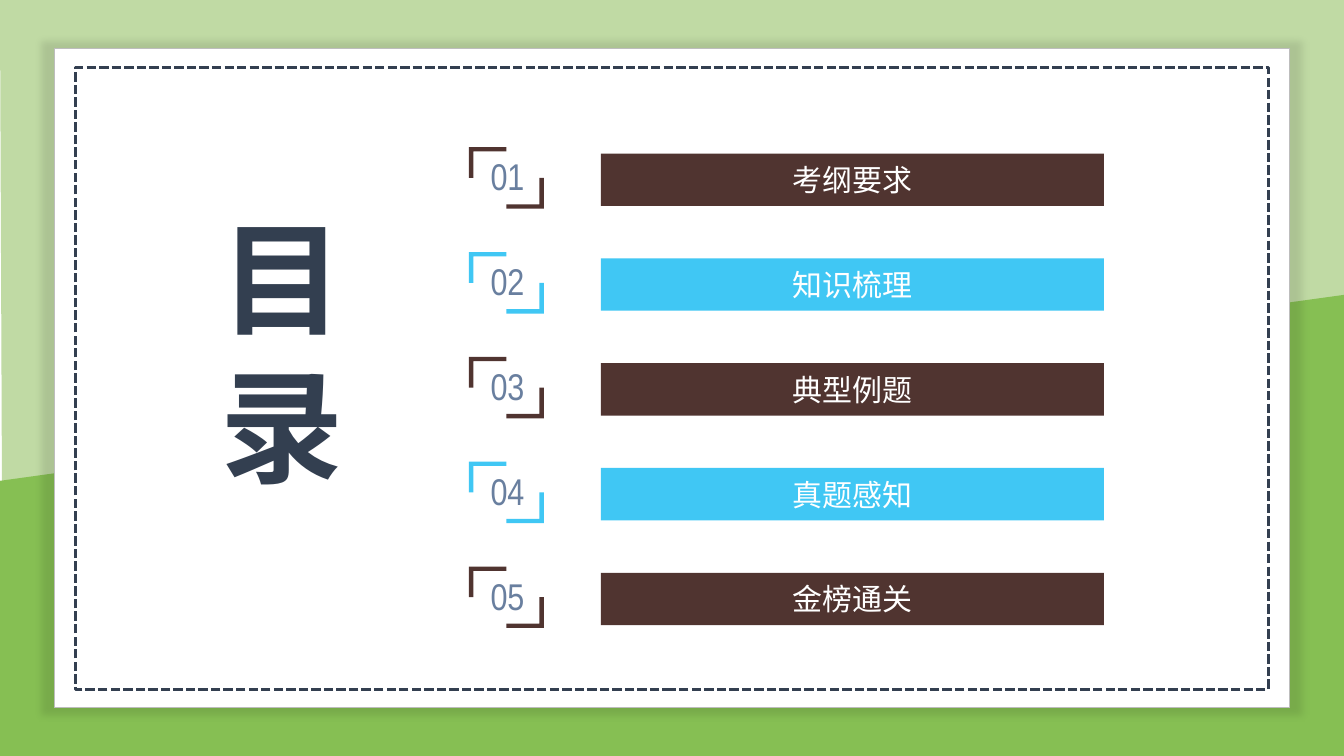
from dataclasses import dataclass

from lxml.etree import SubElement
from pptx import Presentation
from pptx.dml.color import RGBColor
from pptx.enum.dml import MSO_LINE
from pptx.enum.shapes import MSO_SHAPE
from pptx.enum.text import MSO_ANCHOR, PP_ALIGN
from pptx.oxml.ns import qn
from pptx.util import Inches, Pt

WHITE = RGBColor(0xFF, 0xFF, 0xFF)
LIGHT_GREEN = RGBColor(0xC0, 0xDA, 0xA4)
GREEN = RGBColor(0x86, 0xBF, 0x53)
PANEL_EDGE = RGBColor(0xBD, 0xBD, 0xBD)
NAVY = RGBColor(0x33, 0x3F, 0x50)
BROWN = RGBColor(0x50, 0x34, 0x30)
SKY = RGBColor(0x40, 0xC7, 0xF4)
SLATE = RGBColor(0x69, 0x7F, 0x9F)
CHINESE_FONT = "Noto Sans CJK SC"
NUMBER_FONT = "Arial Narrow"
TOPICS = ["考纲要求", "知识梳理", "典型例题", "真题感知", "金榜通关"]


@dataclass
class Box:
    """A rectangle on the slide whose areas are given in percent of it."""

    left: float
    top: float
    width: float
    height: float

    def point(self, x, y):
        """Return the slide position of a percentage point."""
        return round(self.left + self.width * x / 100), round(self.top + self.height * y / 100)

    def area(self, x, y, width, height):
        """Return the box covering the given percentages."""
        return Box(*self.point(x, y), round(self.width * width / 100), round(self.height * height / 100))

    def split_rows(self, count):
        """Split the box into equal rows."""
        return [self.area(0, 100 * row / count, 100, 100 / count) for row in range(count)]

    def bounds(self):
        """Return left, top, width and height."""
        return self.left, self.top, self.width, self.height


def write(shape, text, size, font_name, color, align=PP_ALIGN.CENTER):
    """Write one styled paragraph into a shape and return it."""
    shape.text_frame.word_wrap = True
    paragraph = shape.text_frame.paragraphs[0]
    paragraph.text = text
    paragraph.alignment = align
    font = paragraph.font
    font.size, font.name, font.color.rgb = Pt(size), font_name, color
    SubElement(paragraph._p.pPr.find(qn("a:defRPr")), qn("a:ea"), typeface=font_name)
    return paragraph


def add_polygon(slide, box, contours, color):
    """Fill the contours given in percent of the box."""
    first, *others = [[box.point(*corner) for corner in contour] for contour in contours]
    builder = slide.shapes.build_freeform(*first[0])
    builder.add_line_segments(first[1:])
    for contour in others:
        builder.move_to(*contour[0])
        builder.add_line_segments(contour[1:])
    shape = builder.convert_to_shape()
    shape.shadow.inherit = False
    shape.fill.solid()
    shape.fill.fore_color.rgb = color
    shape.line.fill.background()


def add_rectangle(slide, box, color=None):
    """Add a rectangle, filled when a colour is given."""
    shape = slide.shapes.add_shape(MSO_SHAPE.RECTANGLE, *box.bounds())
    shape.shadow.inherit = False
    if color is None:
        shape.fill.background()
    else:
        shape.fill.solid()
        shape.fill.fore_color.rgb = color
    shape.line.fill.background()
    return shape


def add_background(slide, box):
    """Draw the two green fields that meet along a slanted edge."""
    sky = [(0, 0), (100, 0), (100, 39.4), (0.15, 63.9)]
    hill = [(0, 63.6), (100, 39), (100, 100), (0, 100)]
    add_polygon(slide, box, [sky], LIGHT_GREEN)
    add_polygon(slide, box, [hill], GREEN)


def add_panel(slide, box):
    """Draw the white card with its soft halo and dashed frame."""
    card = add_rectangle(slide, box.area(4.05, 6.4, 91.88, 87.2), WHITE)
    card.line.color.rgb = PANEL_EDGE
    card.line.width = Pt(1)
    effects = card._element.spPr.find(qn("a:effectLst"))
    halo = SubElement(effects, qn("a:outerShdw"), blurRad=str(Pt(5)),
                      sx="102000", sy="102000", algn="ctr", rotWithShape="0")
    tint = SubElement(halo, qn("a:srgbClr"), val="000000")
    SubElement(tint, qn("a:alpha"), val="10000")
    frame = add_rectangle(slide, box.area(5.63, 8.93, 88.73, 82.27))
    frame.line.color.rgb = NAVY
    frame.line.width = Pt(2.25)
    frame.line.dash_style = MSO_LINE.SQUARE_DOT


def add_title(slide, box):
    """Set the title in two stacked characters above the card."""
    title = slide.shapes.title
    title.left, title.top, title.width, title.height = box.bounds()
    slide.shapes._spTree.append(title._element)
    paragraph = write(title, "目 录", 88, CHINESE_FONT, NAVY, PP_ALIGN.LEFT)
    paragraph.font.bold = True
    paragraph.line_spacing = Pt(106)
    title.text_frame.vertical_anchor = MSO_ANCHOR.TOP


def add_bracket(slide, box, color):
    """Draw two opposite corner marks, one the mirror of the other."""
    corner = [(0, 0), (50, 0), (50, 7), (6, 7), (6, 50), (0, 50)]
    mirrored = [(100 - x, 100 - y) for x, y in corner]
    add_polygon(slide, box, [corner, mirrored], color)


def add_topic(slide, box, number, topic, color):
    """Draw one row: bracketed number and topic bar."""
    bar = add_rectangle(slide, box.area(20.79, 6, 79.21, 50), color)
    bar.text_frame.vertical_anchor = MSO_ANCHOR.MIDDLE
    write(bar, topic, 21.4, CHINESE_FONT, WHITE)
    add_bracket(slide, box.area(0, 0, 11.83, 58.65), color)
    label = slide.shapes.add_textbox(*box.area(0.3, 1.5, 11.6, 53).bounds())
    write(label, f"{number:02}", 26.6, NUMBER_FONT, SLATE)


def add_contents(slide, box):
    """Draw all topics in equal rows of alternating colour."""
    for index, (row, topic) in enumerate(zip(box.split_rows(len(TOPICS)), TOPICS)):
        add_topic(slide, row, index + 1, topic, (BROWN, SKY)[index % 2])


def main():
    """Build the contents slide and save it."""
    presentation = Presentation()
    presentation.slide_width, presentation.slide_height = Inches(13.33), Inches(7.5)
    slide = presentation.slides.add_slide(presentation.slide_layouts[5])
    page = Box(0, 0, presentation.slide_width, presentation.slide_height)
    add_background(slide, page)
    add_panel(slide, page)
    add_title(slide, page.area(15.68, 26, 10.88, 48.27))
    add_contents(slide, page.area(34.88, 19.47, 47.25, 69.33))
    presentation.save("out.pptx")


if __name__ == "__main__":
    main()
